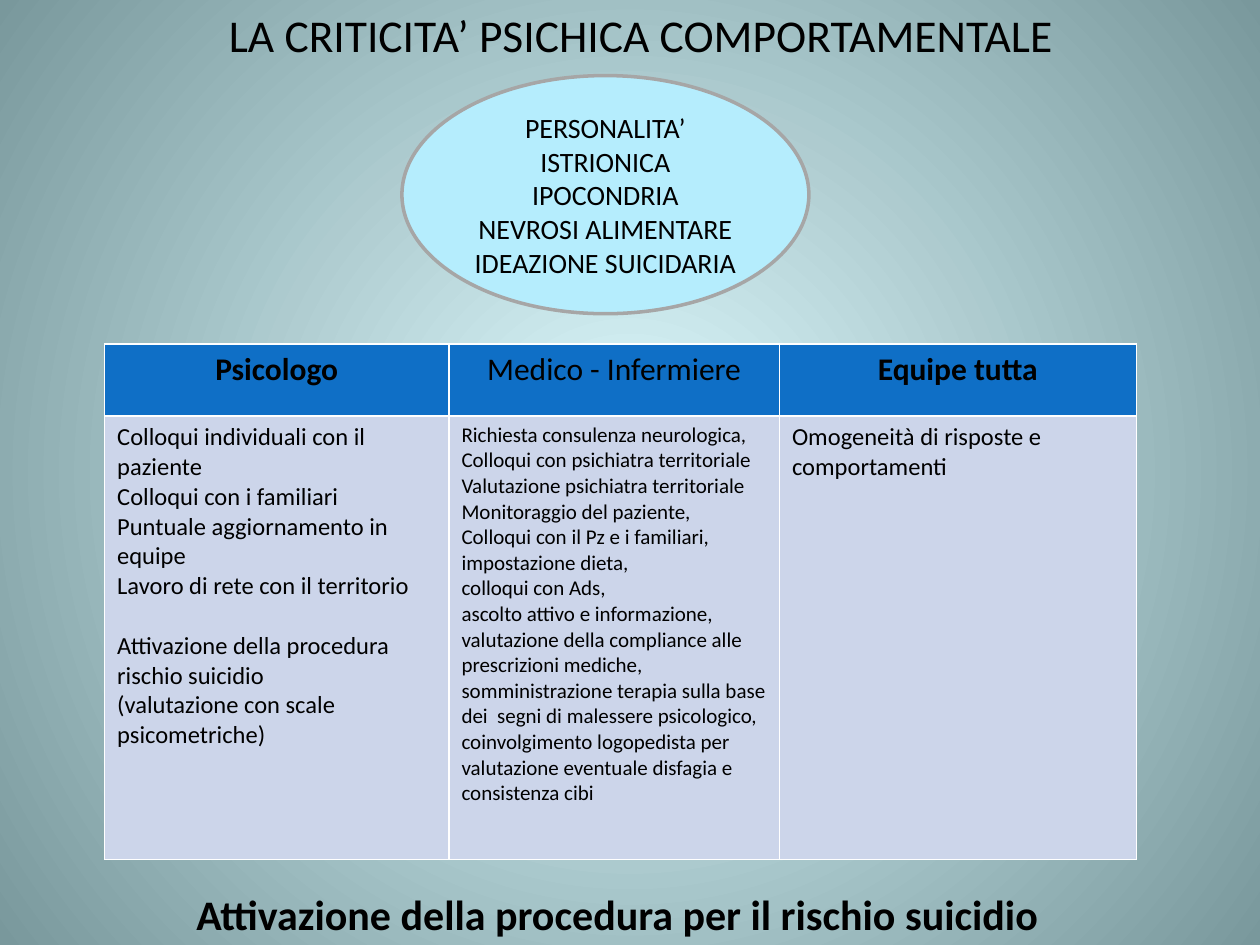
from lxml import etree
from pptx import Presentation
from pptx import util as u
from pptx.dml.color import RGBColor
from pptx.enum import shapes, text
from pptx.oxml.ns import qn

COLS, ROWS = 40, 30
WIDE, HIGH = u.Inches(10), u.Inches(7.5)
FONT = "Calibri"
HUES = {
    "ink": "000000", "glow": "DEFBFF", "edge": "79989C", "head": "0F6FC6",
    "body": "CCD5EA", "rule": "FFFFFF", "oval": "B5EDFD", "ring": "A6A6A6",
}
MID, LEFT = text.PP_ALIGN.CENTER, text.PP_ALIGN.LEFT

HEADS = [("Psicologo", True), ("Medico - Infermiere", False), ("Equipe tutta", True)]
TASKS = [
    (14, [
        "Colloqui individuali con il paziente",
        "Colloqui con i familiari",
        "Puntuale aggiornamento in equipe",
        "Lavoro di rete con il territorio",
        "Attivazione della procedura rischio suicidio \n(valutazione con scale psicometriche)",
    ]),
    (12, [
        "Richiesta consulenza neurologica,",
        "Colloqui con psichiatra territoriale",
        "Valutazione psichiatra territoriale",
        "Monitoraggio del paziente,",
        "Colloqui con il Pz e i familiari, impostazione dieta,",
        "colloqui con Ads, \nascolto attivo e informazione, valutazione della compliance "
        "alle prescrizioni mediche, somministrazione terapia sulla base dei  segni di "
        "malessere psicologico, coinvolgimento logopedista per valutazione eventuale "
        "disfagia e consistenza cibi",
    ]),
    (14, ["Omogeneità di risposte e comportamenti"]),
]
SIGNS = ["PERSONALITA’ ISTRIONICA", "IPOCONDRIA", "NEVROSI ALIMENTARE", "IDEAZIONE SUICIDARIA"]


def hue(name):
    return RGBColor.from_string(HUES[name])


def grid(col, row, wide, high):
    return [int(n) for n in (col * WIDE / COLS, row * HIGH / ROWS,
                             wide * WIDE / COLS, high * HIGH / ROWS)]


def write(frame, lines, size, bold=False, align=LEFT):
    frame.word_wrap = True
    for i, line in enumerate(lines):
        para = frame.paragraphs[0] if i == 0 else frame.add_paragraph()
        para.text = line
        para.alignment = align
        font = para.font
        font.name, font.size, font.bold = FONT, u.Pt(size), bold
        font.color.rgb = hue("ink")


def paint(slide):
    fill = slide.background.fill
    fill.gradient()
    for stop, name in zip(fill.gradient_stops, ("glow", "edge")):
        stop.color.rgb = hue(name)
    grad = slide._element.find(".//" + qn("a:gradFill"))
    grad.remove(grad.find(qn("a:lin")))
    way = etree.SubElement(grad, qn("a:path"), path="circle")
    etree.SubElement(way, qn("a:fillToRect"), l="50000", t="50000", r="50000", b="50000")


def label(slide, box, line, size, bold=False, align=LEFT, anchor=text.MSO_ANCHOR.TOP):
    frame = slide.shapes.add_textbox(*box).text_frame
    frame.vertical_anchor = anchor
    write(frame, [line], size, bold, align)


def oval(slide, box):
    shape = slide.shapes.add_shape(shapes.MSO_SHAPE.OVAL, *box)
    shape.shadow.inherit = False
    shape.fill.solid()
    shape.fill.fore_color.rgb = hue("oval")
    shape.line.color.rgb = hue("ring")
    shape.line.width = u.Pt(2)
    shape.text_frame.vertical_anchor = text.MSO_ANCHOR.MIDDLE
    write(shape.text_frame, SIGNS, 16, align=MID)


def dress(cell, name):
    props = cell._tc.get_or_add_tcPr()
    for side in ("lnL", "lnR", "lnT", "lnB"):
        line = etree.SubElement(props, qn("a:" + side), w=str(u.Pt(1)))
        solid = etree.SubElement(line, qn("a:solidFill"))
        etree.SubElement(solid, qn("a:srgbClr"), val=HUES["rule"])
    cell.fill.solid()
    cell.fill.fore_color.rgb = hue(name)


def duties(slide, box):
    table = slide.shapes.add_table(2, len(HEADS), *box).table
    for col, share in zip(table.columns, (2.73, 2.62, 2.83)):
        col.width = int(box[2] * share / 8.18)
    for row, share in zip(table.rows, (0.14, 0.86)):
        row.height = int(box[3] * share)
    for i, ((head, bold), (size, lines)) in enumerate(zip(HEADS, TASKS)):
        top, low = table.cell(0, i), table.cell(1, i)
        dress(top, "head")
        write(top.text_frame, [head], 18, bold, MID)
        dress(low, "body")
        write(low.text_frame, lines, size)
    table.cell(1, 0).text_frame.paragraphs[-1].space_before = u.Pt(17)


def main():
    deck = Presentation()
    deck.slide_width, deck.slide_height = WIDE, HIGH
    slide = deck.slides.add_slide(deck.slide_layouts[6])
    paint(slide)
    label(slide, grid(2.36, 0, 36, 2.16), "LA CRITICITA’ PSICHICA COMPORTAMENTALE",
          26, align=MID, anchor=text.MSO_ANCHOR.MIDDLE)
    duties(slide, grid(3.32, 10.92, 32.76, 16.36))
    oval(slide, grid(12.76, 2.4, 12.92, 7.56))
    label(slide, grid(5.84, 28, 28.96, 2),
          "Attivazione della procedura per il rischio suicidio", 24, bold=True)
    deck.save("out.pptx")


if __name__ == "__main__":
    main()
